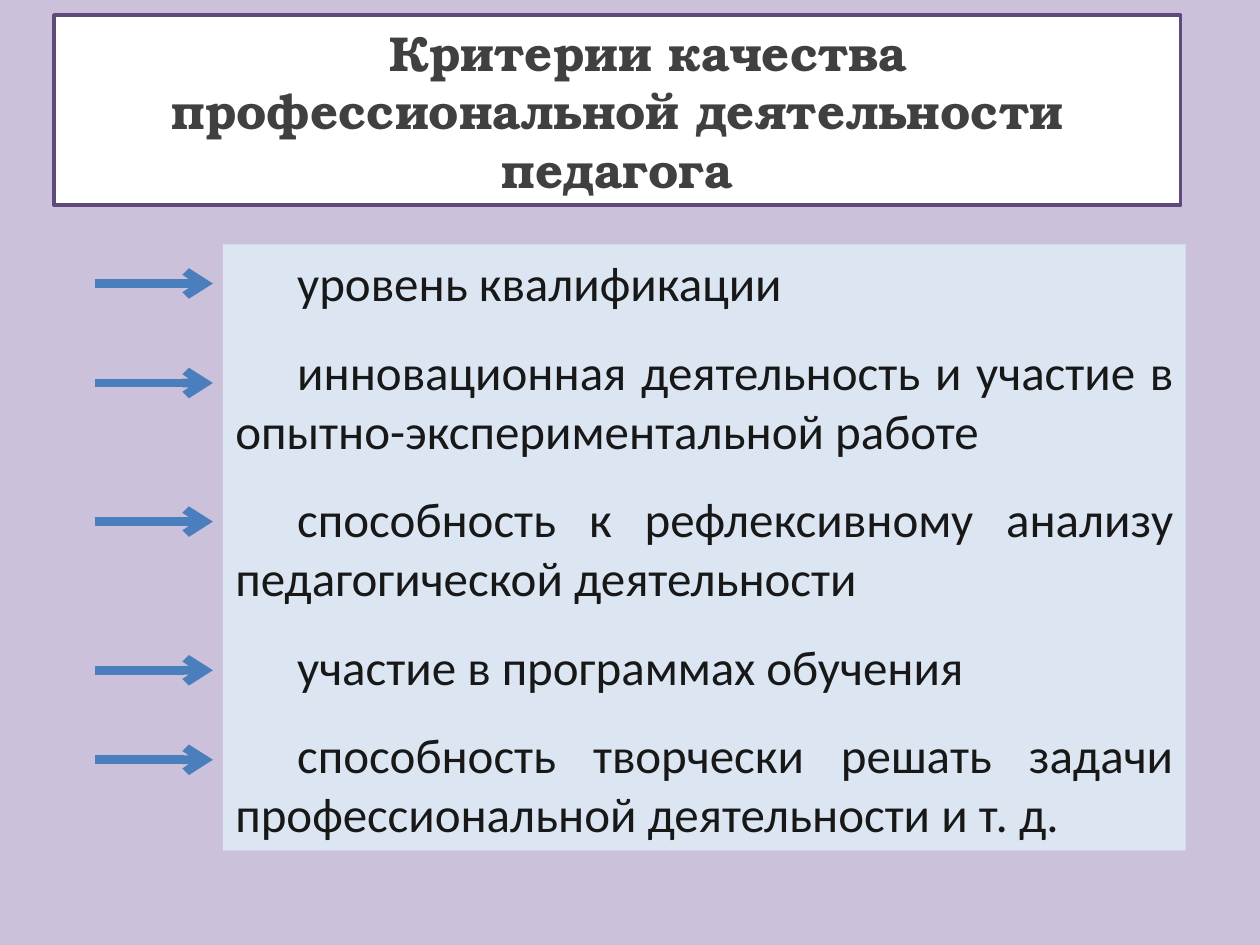
from lxml import etree
from pptx import Presentation
from pptx.dml.color import RGBColor
from pptx.enum import shapes, text
from pptx.oxml.ns import qn
from pptx.util import Inches, Pt

LILAC = RGBColor(0xCC, 0xC1, 0xDA)
PURPLE = RGBColor(0x60, 0x4A, 0x7B)
WHITE = RGBColor(0xFF, 0xFF, 0xFF)
PALE_BLUE = RGBColor(0xDC, 0xE6, 0xF2)
BLUE = RGBColor(0x4B, 0x7E, 0xBC)
GREY = RGBColor(0x40, 0x40, 0x40)
BLACK = RGBColor(0x18, 0x18, 0x18)

TITLE = "Критерии качества профессиональной деятельности педагога"
CRITERIA = [
    ("уровень квалификации", 2.25),
    ("инновационная деятельность и участие в опытно-экспериментальной работе", 3.04),
    ("способность к рефлексивному анализу педагогической деятельности", 4.14),
    ("участие в программах обучения", 5.32),
    ("способность творчески решать задачи профессиональной деятельности и т. д.", 6.03),
]


def add_box(left, top, width, height, fill):
    sp = s.shapes.add_shape(shapes.MSO_SHAPE.RECTANGLE, Inches(left), Inches(top),
                            Inches(width), Inches(height))
    sp.shadow.inherit = False
    sp.fill.solid()
    sp.fill.fore_color.rgb = fill
    sp.text_frame.word_wrap = True
    sp.text_frame.vertical_anchor = text.MSO_ANCHOR.MIDDLE
    return sp


def style(p, align, font, color, bold):
    p.alignment = align
    p.font.name = font
    p.font.size = Pt(28)
    p.font.bold = bold
    p.font.color.rgb = color
    p._p.get_or_add_pPr().set("indent", str(Inches(0.49)))


prs = Presentation()
prs.slide_width, prs.slide_height = Inches(10), Inches(7.5)
s = prs.slides.add_slide(prs.slide_layouts[6])
s.background.fill.solid()
s.background.fill.fore_color.rgb = LILAC

sp = add_box(0.43, 0.12, 8.94, 1.51, WHITE)
sp.line.color.rgb = PURPLE
sp.line.width = Pt(2.25)
p = sp.text_frame.paragraphs[0]
p.text = TITLE
style(p, text.PP_ALIGN.CENTER, "TeX Gyre Bonum", GREY, True)

sp = add_box(1.77, 1.94, 7.64, 4.81, PALE_BLUE)
sp.line.fill.background()
tf = sp.text_frame
for i, (criterion, y) in enumerate(CRITERIA):
    p = tf.add_paragraph() if i else tf.paragraphs[0]
    p.text = criterion
    style(p, text.PP_ALIGN.JUSTIFY, "Calibri", BLACK, False)
    if i:
        p.space_before = Pt(17)

    arrow = s.shapes.add_connector(shapes.MSO_CONNECTOR.STRAIGHT, Inches(0.75), Inches(y),
                                   Inches(1.69), Inches(y))
    arrow.line.color.rgb = BLUE
    arrow.line.width = Pt(5)
    etree.SubElement(arrow.line._get_or_add_ln(), qn("a:tailEnd"), type="arrow")
    etree.SubElement(arrow._element.spPr, qn("a:effectLst"))

prs.save("out.pptx")
